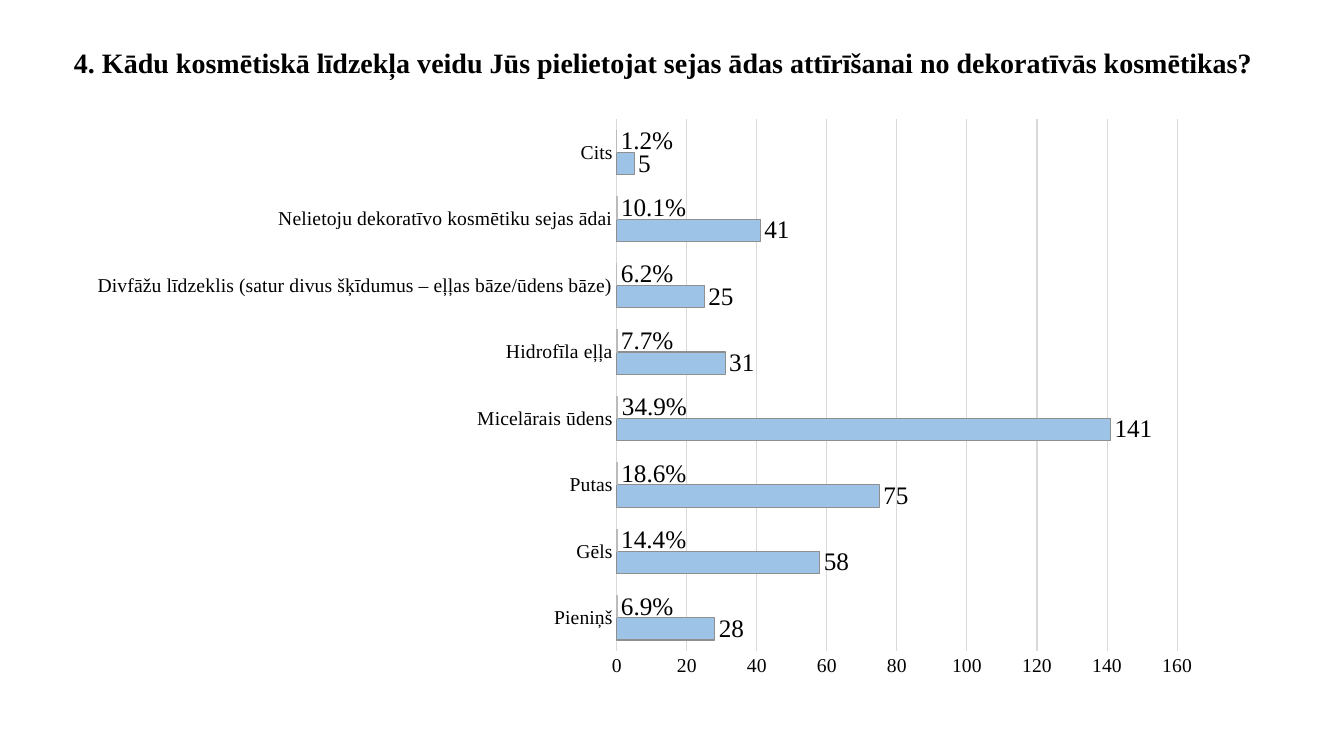
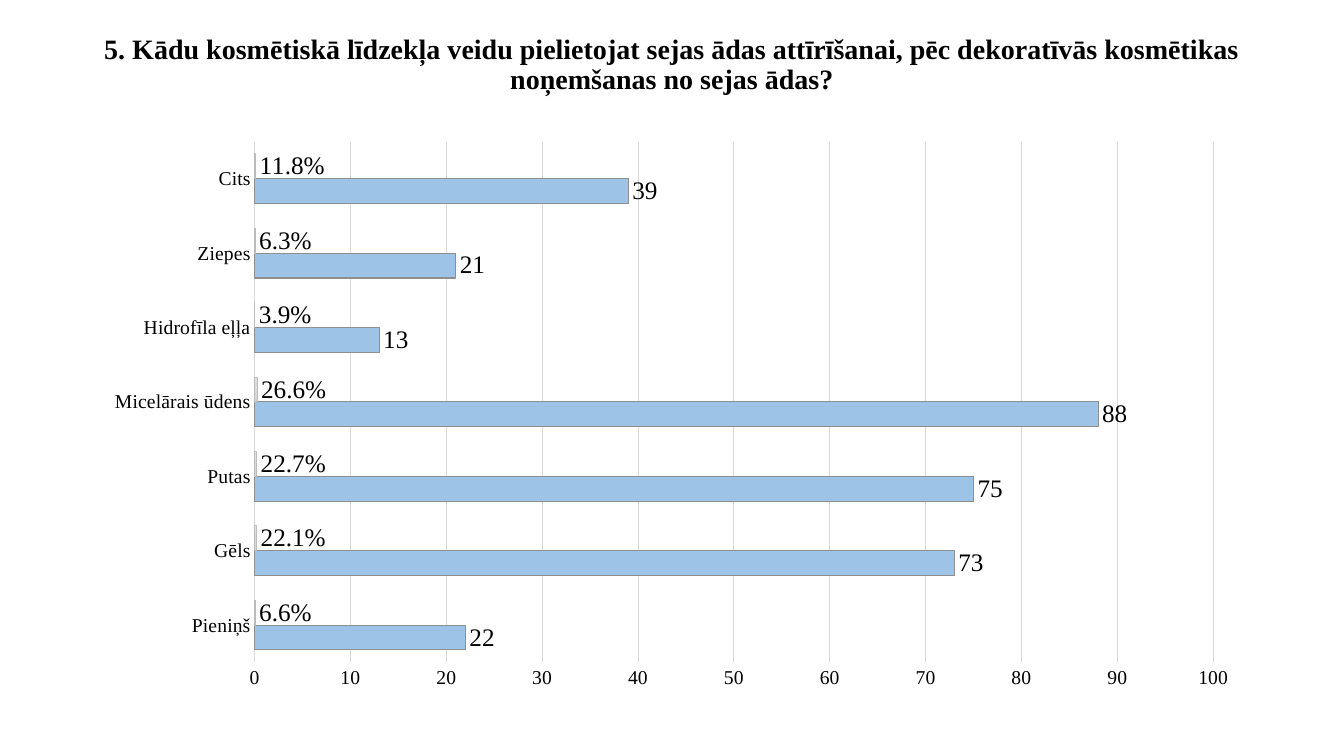
from dataclasses import dataclass

from lxml import etree
from pptx import Presentation
from pptx.chart.chart import Chart
from pptx.chart.data import CategoryChartData
from pptx.chart.series import BarSeries
from pptx.dml.color import RGBColor
from pptx.enum.chart import XL_CHART_TYPE as ChartType
from pptx.enum.chart import XL_LABEL_POSITION as LabelPosition
from pptx.enum.chart import XL_TICK_MARK as TickMark
from pptx.enum.text import MSO_ANCHOR, MSO_AUTO_SIZE, PP_ALIGN
from pptx.oxml.ns import qn
from pptx.slide import Slide
from pptx.text.text import Font
from pptx.util import Pt

BLACK = RGBColor(0x00, 0x00, 0x00)
BAR_BLUE = RGBColor(0x9D, 0xC3, 0xE6)
BAR_OUTLINE = RGBColor(0x8F, 0x8F, 0x8F)
SHARE_LIGHT = RGBColor(0xE2, 0xE2, 0xE2)
SHARE_DARK = RGBColor(0xD4, 0xD4, 0xD4)
SHARE_OUTLINE = RGBColor(0xBB, 0xBB, 0xBB)
GRID_GRAY = RGBColor(0xD9, 0xD9, 0xD9)

SERIF = "Times New Roman"
TITLE_ONLY = 5
LINE_WIDTH = Pt(0.75)


@dataclass(frozen=True)
class Box:
    left: float
    top: float
    width: float
    height: float

    def in_points(self) -> tuple[Pt, Pt, Pt, Pt]:
        return Pt(self.left), Pt(self.top), Pt(self.width), Pt(self.height)


@dataclass(frozen=True)
class Answer:
    label: str
    count: int
    share: float


@dataclass(frozen=True)
class Question:
    title: str
    title_box: Box
    chart_box: Box
    plot: Box  # fractions of the chart box
    axis_maximum: int
    axis_step: int
    answers: tuple[Answer, ...]


QUESTIONS = (
    Question(
        title="4. Kādu kosmētiskā līdzekļa veidu Jūs pielietojat sejas ādas "
        "attīrīšanai no dekoratīvās kosmētikas?",
        title_box=Box(0, 0, 948, 91.5),
        chart_box=Box(53.3, 77, 813.6, 414.7),
        plot=Box(0.476, 0.02, 0.492, 0.916),
        axis_maximum=160,
        axis_step=20,
        answers=(
            Answer("Pieniņš", 28, 0.069),
            Answer("Gēls", 58, 0.144),
            Answer("Putas", 75, 0.186),
            Answer("Micelārais ūdens", 141, 0.349),
            Answer("Hidrofīla eļļa", 31, 0.077),
            Answer("Divfāžu līdzeklis (satur divus šķīdumus – eļļas bāze/ūdens bāze)", 25, 0.062),
            Answer("Nelietoju dekoratīvo kosmētiku sejas ādai", 41, 0.101),
            Answer("Cits", 5, 0.012),
        ),
    ),
    Question(
        title="5. Kādu kosmētiskā līdzekļa veidu pielietojat sejas ādas attīrīšanai, "
        "pēc dekoratīvās kosmētikas noņemšanas no sejas ādas?",
        title_box=Box(66, 0, 828, 93),
        chart_box=Box(66, 93, 828, 407.5),
        plot=Box(0.14, 0.02, 0.827, 0.913),
        axis_maximum=100,
        axis_step=10,
        answers=(
            Answer("Pieniņš", 22, 0.066),
            Answer("Gēls", 73, 0.221),
            Answer("Putas", 75, 0.227),
            Answer("Micelārais ūdens", 88, 0.266),
            Answer("Hidrofīla eļļa", 13, 0.039),
            Answer("Ziepes", 21, 0.063),
            Answer("Cits", 39, 0.118),
        ),
    ),
)


def style_font(font: Font, size: float, bold: bool = False) -> None:
    font.name = SERIF
    font.size = Pt(size)
    font.bold = bold
    font.color.rgb = BLACK


def set_title(slide: Slide, text: str, box: Box) -> None:
    title = slide.shapes.title
    title.left, title.top, title.width, title.height = box.in_points()
    frame = title.text_frame
    frame.word_wrap = True
    frame.auto_size = MSO_AUTO_SIZE.NONE
    frame.vertical_anchor = MSO_ANCHOR.MIDDLE
    paragraph = frame.paragraphs[0]
    paragraph.alignment = PP_ALIGN.CENTER
    paragraph.line_spacing = 0.9
    run = paragraph.add_run()
    run.text = text
    style_font(run.font, 20, bold=True)


def set_plot_layout(chart: Chart, plot: Box) -> None:
    """Fix the inner plot area, leaving the axis labels outside it."""
    plot_area = chart.plots[0]._element.getparent()
    for old_layout in plot_area.findall(qn("c:layout")):
        plot_area.remove(old_layout)
    layout = etree.Element(qn("c:layout"))
    manual = etree.SubElement(layout, qn("c:manualLayout"))
    settings = (
        ("layoutTarget", "inner"), ("xMode", "edge"), ("yMode", "edge"),
        ("x", plot.left), ("y", plot.top), ("w", plot.width), ("h", plot.height),
    )
    for name, value in settings:
        etree.SubElement(manual, qn(f"c:{name}")).set("val", str(value))
    plot_area.insert(0, layout)


def style_series(series: BarSeries, outline: RGBColor, number_format: str) -> None:
    series.invert_if_negative = False
    series.format.line.color.rgb = outline
    series.format.line.width = LINE_WIDTH
    labels = series.data_labels
    labels.show_value = True
    labels.number_format = number_format
    labels.number_format_is_linked = False
    labels.position = LabelPosition.OUTSIDE_END
    style_font(labels.font, 18)


def style_axes(chart: Chart, question: Question) -> None:
    for axis in (chart.category_axis, chart.value_axis):
        axis.major_tick_mark = axis.minor_tick_mark = TickMark.NONE
        style_font(axis.tick_labels.font, 14)
    values = chart.value_axis
    values.minimum_scale = 0
    values.maximum_scale = question.axis_maximum
    values.major_unit = question.axis_step
    values.format.line.fill.background()
    values.has_major_gridlines = True
    for line in (chart.category_axis.format.line, values.major_gridlines.format.line):
        line.color.rgb = GRID_GRAY
        line.width = LINE_WIDTH


def add_answer_chart(slide: Slide, question: Question) -> None:
    data = CategoryChartData()
    data.categories = [answer.label for answer in question.answers]
    data.add_series("Series 1", [answer.count for answer in question.answers])
    data.add_series("Series 2", [answer.share for answer in question.answers])
    chart = slide.shapes.add_chart(
        ChartType.BAR_CLUSTERED, *question.chart_box.in_points(), data
    ).chart
    chart.has_legend = False
    chart.has_title = False
    chart.font.name = "Calibri"
    chart.font.size = Pt(10)
    chart.font.color.rgb = BLACK

    plot = chart.plots[0]
    plot.gap_width = 100
    plot.overlap = 0
    plot.vary_by_categories = False
    counts, shares = plot.series
    counts.format.fill.solid()
    counts.format.fill.fore_color.rgb = BAR_BLUE
    style_series(counts, BAR_OUTLINE, "General")
    share_fill = shares.format.fill
    share_fill.gradient()
    share_fill.gradient_angle = 270
    for stop, color in zip(share_fill.gradient_stops, (SHARE_LIGHT, SHARE_DARK)):
        stop.color.rgb = color
    style_series(shares, SHARE_OUTLINE, "0.0%")

    style_axes(chart, question)
    set_plot_layout(chart, question.plot)


def main() -> None:
    presentation = Presentation()
    presentation.slide_width = Pt(960)
    presentation.slide_height = Pt(540)
    for question in QUESTIONS:
        slide = presentation.slides.add_slide(presentation.slide_layouts[TITLE_ONLY])
        set_title(slide, question.title, question.title_box)
        add_answer_chart(slide, question)
    presentation.save("out.pptx")


if __name__ == "__main__":
    main()
